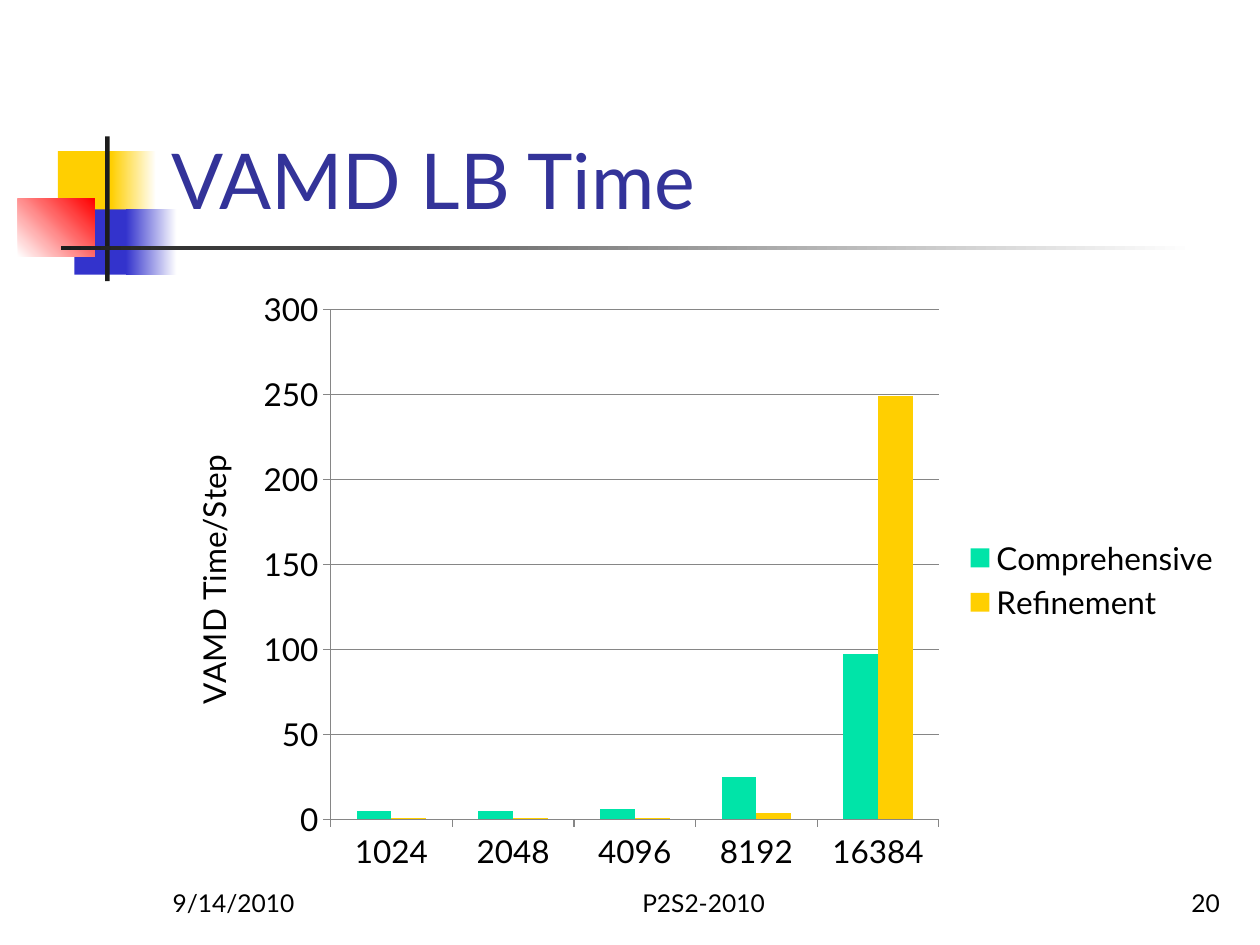
from dataclasses import dataclass

from pptx import Presentation
from pptx.chart.data import CategoryChartData
from pptx.dml.color import RGBColor
from pptx.enum.chart import XL_CHART_TYPE, XL_LEGEND_POSITION, XL_TICK_MARK
from pptx.enum.shapes import MSO_SHAPE
from pptx.enum.text import MSO_ANCHOR, PP_ALIGN
from pptx.util import Cm, Pt


@dataclass(frozen=True)
class Theme:
    font: str = "Lato"
    white: str = "FFFFFF"
    black: str = "000000"
    ink: str = "1C1C1C"
    gold: str = "FFCF01"
    blue: str = "3333CC"
    red: str = "FF0000"
    green: str = "00E4A8"
    title: str = "333399"
    grid: str = "868686"
    head: int = 44
    label: int = 18
    foot: int = 14


class Painter:
    def __init__(self, slide, theme):
        self.slide = slide
        self.theme = theme

    def style(self, font, size, color):
        font.name = self.theme.font
        font.size = Pt(size)
        font.bold = False
        font.color.rgb = RGBColor.from_string(color)

    def block(self, box, *colors, angle=0):
        """Draw a borderless rectangle: one colour is solid, two are a gradient."""
        shape = self.slide.shapes.add_shape(MSO_SHAPE.RECTANGLE, *map(Cm, box))
        shape.shadow.inherit = False
        shape.line.fill.background()
        fill = shape.fill
        if len(colors) == 1:
            fill.solid()
            fill.fore_color.rgb = RGBColor.from_string(colors[0])
            return
        fill.gradient()
        fill.gradient_angle = angle
        for stop, color in zip(fill.gradient_stops, colors):
            stop.color.rgb = RGBColor.from_string(color)

    def text(self, box, words, size, color, align=PP_ALIGN.LEFT):
        frame = self.slide.shapes.add_textbox(*map(Cm, box)).text_frame
        frame.word_wrap = True
        frame.vertical_anchor = MSO_ANCHOR.BOTTOM
        para = frame.paragraphs[0]
        para.text = words
        para.alignment = align
        self.style(para.font, size, color)

    def columns(self, box, cats, series, title):
        """Add clustered columns; series maps a name to its values and colour."""
        theme = self.theme
        data = CategoryChartData()
        data.categories = cats
        for name, (values, _) in series.items():
            data.add_series(name, values)
        chart = self.slide.shapes.add_chart(
            XL_CHART_TYPE.COLUMN_CLUSTERED, *map(Cm, box), data).chart
        self.style(chart.font, theme.label, theme.black)
        chart.has_title = False
        chart.has_legend = True
        chart.legend.position = XL_LEGEND_POSITION.RIGHT
        chart.legend.include_in_layout = False

        plot = chart.plots[0]
        plot.gap_width = 150
        plot.overlap = 0
        plot.vary_by_categories = False
        for item, (_, color) in zip(plot.series, series.values()):
            item.format.fill.solid()
            item.format.fill.fore_color.rgb = RGBColor.from_string(color)

        scale = chart.value_axis
        scale.has_major_gridlines = True
        for axis in (chart.category_axis, scale):
            axis.major_tick_mark = XL_TICK_MARK.OUTSIDE
            self.rule(axis.format.line)
        self.rule(scale.major_gridlines.format.line)
        scale.axis_title.text_frame.text = title
        para = scale.axis_title.text_frame.paragraphs[0]
        self.style(para.font, theme.label, theme.black)

    def rule(self, line):
        line.color.rgb = RGBColor.from_string(self.theme.grid)
        line.width = Pt(0.75)


def main():
    deck = Presentation()
    deck.slide_width, deck.slide_height = Cm(25.4), Cm(19.05)
    theme = Theme()
    pen = Painter(deck.slides.add_slide(deck.slide_layouts[6]), theme)

    pen.block((1.17, 3.05, 1.22, 1.32), theme.gold)
    pen.block((2.24, 3.05, 0.91, 1.32), theme.gold, theme.white)
    pen.block((1.5, 4.22, 1.17, 1.32), theme.blue)
    pen.block((2.54, 4.22, 1.02, 1.32), theme.blue, theme.white)
    pen.block((0.36, 4.01, 1.55, 1.17), theme.white, theme.red, angle=45)
    pen.block((2.12, 2.75, 0.09, 2.92), theme.ink)
    pen.block((1.23, 4.95, 22.86, 0.09), theme.ink, theme.white)

    pen.text((3.2, 0.6, 21.64, 4.06), "VAMD LB Time", theme.head, theme.title)
    pen.columns(
        (3.28, 5.61, 21.59, 12.17),
        ["1024", "2048", "4096", "8192", "16384"],
        {"Comprehensive": ((5, 5, 6, 25, 97), theme.green),
         "Refinement": ((1, 1, 1, 4, 249), theme.gold)},
        "VAMD Time/Step")

    for left, width, words, align in (
            (3.23, 5.28, "9/14/2010", PP_ALIGN.LEFT),
            (10.16, 8.05, "P2S2-2010", PP_ALIGN.CENTER),
            (19.56, 5.28, "20", PP_ALIGN.RIGHT)):
        pen.text((left, 17.35, width, 1.27), words, theme.foot, theme.black, align)

    deck.save("out.pptx")


if __name__ == "__main__":
    main()
